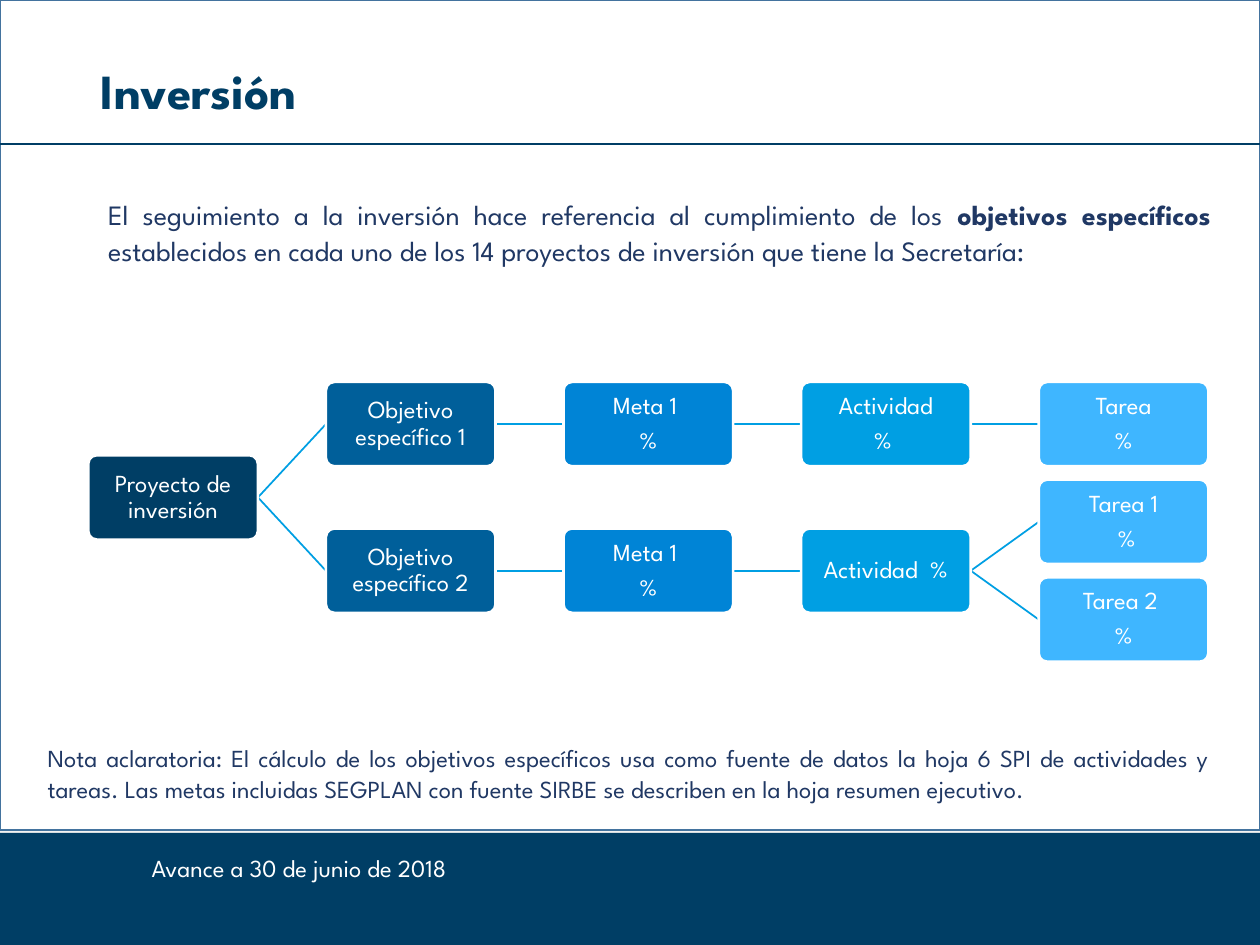
from lxml.etree import SubElement
from pptx import Presentation
from pptx.dml.color import RGBColor
from pptx.enum.shapes import MSO_CONNECTOR, MSO_SHAPE
from pptx.enum.text import MSO_ANCHOR, PP_ALIGN
from pptx.oxml.ns import qn
from pptx.util import Cm, Pt

FONT = "League Spartan"
COLORS = {
    "white": "FFFFFF", "gray": "F2F2F2", "navy": "003E65", "frame": "43739E",
    "text": "203864", "objective": "005F9A", "goal": "0084D6",
    "activity": "009FE3", "task": "3FB6FF",
}
LEVEL_COLORS = ["navy", "objective", "goal", "activity", "task"]

# Diagram grid in centimetres: one column per level, rows counted in task steps
BOX_WIDTH, BOX_HEIGHT = 3.42, 1.7
FIRST_LEFT, COLUMN_STEP = 1.78, 4.79
FIRST_CENTER, ROW_STEP = 8.55, 1.97

# Each node: level, row, paragraphs
NODES = {
    "project": (0, 0.75, ["Proyecto de inversión"]),
    "objective 1": (1, 0, ["Objetivo específico 1"]),
    "goal 1": (2, 0, ["Meta 1 ", "%"]),
    "activity 1": (3, 0, ["Actividad", "% "]),
    "task": (4, 0, ["Tarea", "%"]),
    "objective 2": (1, 1.5, ["Objetivo específico 2"]),
    "goal 2": (2, 1.5, ["Meta 1 ", "%"]),
    "activity 2": (3, 1.5, ["Actividad  %"]),
    "task 1": (4, 1, ["Tarea 1", " %"]),
    "task 2": (4, 2, ["Tarea 2 ", "%"]),
}
LINKS = [
    ("project", "objective 1"), ("objective 1", "goal 1"),
    ("goal 1", "activity 1"), ("activity 1", "task"),
    ("project", "objective 2"), ("objective 2", "goal 2"),
    ("goal 2", "activity 2"), ("activity 2", "task 1"), ("activity 2", "task 2"),
]


def color(name):
    return RGBColor.from_string(COLORS[name])


def add_run(paragraph, text, size, color_name, bold=False, font=FONT):
    run = paragraph.add_run()
    run.text = text
    run.font.name = font
    run.font.size = Pt(size)
    run.font.bold = bold
    run.font.color.rgb = color(color_name)


def add_box(slide, kind, left, top, width, height, fill, line=None, line_width=1):
    shape = slide.shapes.add_shape(kind, Cm(left), Cm(top), Cm(width), Cm(height))
    shape.shadow.inherit = False
    shape.fill.solid()
    shape.fill.fore_color.rgb = color(fill)
    if line:
        shape.line.color.rgb = color(line)
        shape.line.width = Pt(line_width)
    else:
        shape.line.fill.background()
    return shape


def add_line(slide, start, end, color_name):
    connector = slide.shapes.add_connector(
        MSO_CONNECTOR.STRAIGHT, *(Cm(value) for value in (*start, *end)))
    connector.line.color.rgb = color(color_name)
    connector.line.width = Pt(1)
    SubElement(connector.element.spPr, qn("a:effectLst"))


def add_text(slide, left, top, width, height, runs, size):
    shape = slide.shapes.add_textbox(Cm(left), Cm(top), Cm(width), Cm(height))
    shape.text_frame.word_wrap = True
    paragraph = shape.text_frame.paragraphs[0]
    paragraph.alignment = PP_ALIGN.JUSTIFY
    paragraph.line_spacing = 1.07
    for text, bold in runs:
        add_run(paragraph, text, size, "text", bold)


def node_position(name):
    """Left edge and vertical centre of a node."""
    level, row, _ = NODES[name]
    return FIRST_LEFT + level * COLUMN_STEP, FIRST_CENTER + row * ROW_STEP


def add_node(slide, name):
    level, _, lines = NODES[name]
    left, center = node_position(name)
    shape = add_box(slide, MSO_SHAPE.ROUNDED_RECTANGLE, left, center - BOX_HEIGHT / 2,
                    BOX_WIDTH, BOX_HEIGHT, LEVEL_COLORS[level], "white", 1.5)
    shape.adjustments[0] = 0.1
    frame = shape.text_frame
    frame.word_wrap = True
    frame.vertical_anchor = MSO_ANCHOR.MIDDLE
    frame.margin_left = frame.margin_right = Cm(0.08)
    frame.margin_top = frame.margin_bottom = Cm(0.08)
    for index, line in enumerate(lines):
        paragraph = frame.add_paragraph() if index else frame.paragraphs[0]
        paragraph.alignment = PP_ALIGN.CENTER
        paragraph.line_spacing = 0.9
        paragraph.space_after = Pt(4.9)
        add_run(paragraph, line, 14, "white")


def add_link(slide, source, target):
    left, center = node_position(source)
    add_line(slide, (left + BOX_WIDTH, center), node_position(target), "activity")


def add_backdrop(slide):
    add_box(slide, MSO_SHAPE.RECTANGLE, 0, 0, 25.4, 18.87, "gray")
    add_box(slide, MSO_SHAPE.RECTANGLE, 0, 16.79, 25.4, 2.26, "navy")
    add_box(slide, MSO_SHAPE.RECTANGLE, 0, 0, 25.4, 16.74, "white", "frame")
    footer = slide.shapes.add_textbox(Cm(2.11), Cm(16.94), Cm(7.7), Cm(1.02))
    footer.text_frame.word_wrap = False
    paragraph = footer.text_frame.paragraphs[0]
    paragraph.alignment = PP_ALIGN.CENTER
    add_run(paragraph, " ", 18, "white", True, "Calibri")
    add_run(paragraph, "Avance a 30 de junio de 2018", 14, "white")


def add_title(slide, text):
    title = slide.shapes.title
    title.left, title.top, title.width, title.height = Cm(1.78), Cm(0.97), Cm(21.89), Cm(1.7)
    title.text_frame.vertical_anchor = MSO_ANCHOR.MIDDLE
    paragraph = title.text_frame.paragraphs[0]
    paragraph.alignment = PP_ALIGN.LEFT
    add_run(paragraph, text, 28, "navy", True)
    # Bring the title in front of the backdrop
    title.element.getparent().append(title.element)


def main():
    presentation = Presentation()
    presentation.slide_width, presentation.slide_height = Cm(25.4), Cm(19.05)
    slide = presentation.slides.add_slide(presentation.slide_layouts[5])

    # Backdrop and heading
    add_backdrop(slide)
    add_title(slide, "Inversión")
    add_line(slide, (25.4, 2.9), (0, 2.9), "navy")

    # Project tree, links behind the boxes
    for source, target in LINKS:
        add_link(slide, source, target)
    for name in NODES:
        add_node(slide, name)

    # Introduction and note
    add_text(slide, 1.93, 3.81, 22.73, 2.46, [
        ("El seguimiento a la inversión hace referencia al cumplimiento de los ", False),
        ("objetivos específicos ", True),
        ("establecidos en cada uno de los 14 proyectos de inversión que tiene "
         "la Secretaría:", False),
    ], 16)
    add_text(slide, 0.71, 14.81, 23.93, 2.18, [
        ("Nota aclaratoria: El cálculo de los objetivos específicos usa como fuente de "
         "datos la hoja 6 SPI de actividades y tareas. Las metas incluidas SEGPLAN con "
         "fuente SIRBE se describen en la hoja resumen ejecutivo.", False),
    ], 14)

    presentation.save("out.pptx")


if __name__ == "__main__":
    main()
